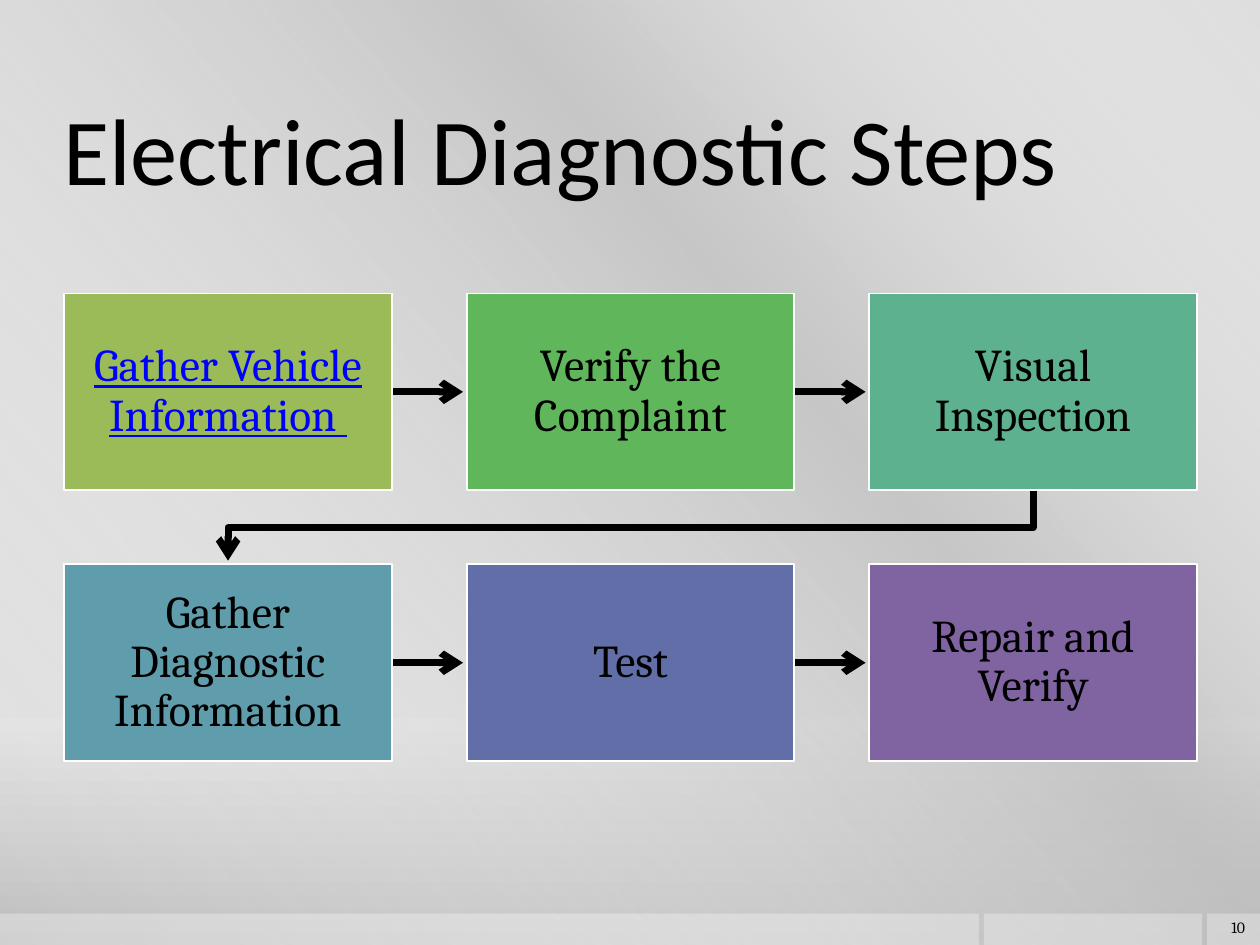
from lxml.etree import SubElement
from pptx import Presentation
from pptx.dml.color import RGBColor
from pptx.enum.shapes import MSO_CONNECTOR as Connector, MSO_SHAPE as Shape
from pptx.enum.text import MSO_ANCHOR as Anchor, PP_ALIGN as Align
from pptx.oxml.ns import qn
from pptx.util import Inches, Pt

TITLE = "Electrical Diagnostic Steps"
PAGE_NUMBER = "10"
COLORS = {"black": "000000", "white": "FFFFFF", "link": "0000FF"}
STEPS = [
    ("Gather Vehicle Information ", "9BBB59"),
    ("Verify the Complaint", "5FB65B"),
    ("Visual Inspection", "5DB18E"),
    ("Gather Diagnostic Information", "5F9DAC"),
    ("Test", "626EA7"),
    ("Repair and Verify", "8064A2"),
]
LINKED_STEP = 0
BACKDROP = [(0, "DEDEDE", 100), (76, "E1E1E1", 100), (100, "BDBDBD", 100)]
SHEEN = [(0, "FFFFFF", 0), (34, "BFBFBF", 61), (38, "BFBFBF", 76), (100, "FFFFFF", 0)]
FOOTER_STRIPS = [(0, 7.77), (7.81, 1.73), (9.58, 0.42)]

WIDTH, HEIGHT = 10, 7.5
FOOTER_HEIGHT = 0.25
COLUMNS = 3
LEFT, TOP = 0.51, 2.33
BOX_WIDTH, BOX_HEIGHT = 2.6, 1.56
COLUMN_STEP, ROW_STEP = 3.195, 2.15
ARROW_GAP = 0.03


def inches(*lengths):
    return [Inches(length) for length in lengths]


def rgb(name):
    return RGBColor.from_string(COLORS.get(name, name))


def write(shape, text, size, font="Cambria", color="black", align=Align.LEFT,
          underline=None, spacing=None, margins=(0.1, 0.05)):
    frame = shape.text_frame
    frame.word_wrap = True
    frame.vertical_anchor = Anchor.MIDDLE
    frame.margin_left = frame.margin_right = Inches(margins[0])
    frame.margin_top = frame.margin_bottom = Inches(margins[1])
    para = frame.paragraphs[0]
    para.alignment = align
    para.line_spacing = spacing
    span = para.add_run()
    span.text = text
    span.font.name = font
    span.font.size = Pt(size)
    span.font.underline = underline
    span.font.color.rgb = rgb(color)


def set_alpha(color_element, percent):
    SubElement(color_element, qn("a:alpha"), val=str(percent * 1000))


def paint_gradient(fill, holder, stops, angle):
    fill.gradient()
    fill.gradient_angle = 360 - angle
    stop_list = holder.find(qn("a:gradFill")).find(qn("a:gsLst"))
    for old in list(stop_list):
        stop_list.remove(old)
    for position, color, alpha in stops:
        stop = SubElement(stop_list, qn("a:gs"), pos=str(position * 1000))
        set_alpha(SubElement(stop, qn("a:srgbClr"), val=color), alpha)


def add_panel(slide, left, top, width, height):
    panel = slide.shapes.add_shape(Shape.RECTANGLE, *inches(left, top, width, height))
    panel.shadow.inherit = False
    panel.line.fill.background()
    return panel


def add_background(slide):
    fill = slide.background.fill
    fill.solid()
    paint_gradient(fill, slide.element.find(".//" + qn("p:bgPr")), BACKDROP, 90)
    sheen = add_panel(slide, 0, 0, WIDTH, HEIGHT)
    paint_gradient(sheen.fill, sheen.element.spPr, SHEEN, 140)
    for left, width in FOOTER_STRIPS:
        strip = add_panel(slide, left, HEIGHT - FOOTER_HEIGHT, width, FOOTER_HEIGHT)
        strip.fill.solid()
        strip.fill.fore_color.rgb = rgb("white")
        set_alpha(strip.element.spPr.find(".//" + qn("a:srgbClr")), 30)


def style_arrow(arrow):
    arrow.line.color.rgb = rgb("black")
    arrow.line.width = Pt(4)
    SubElement(arrow.line._get_or_add_ln(), qn("a:tailEnd"), type="arrow")


def add_arrow(slide, left, top):
    start = left + BOX_WIDTH
    end = left + COLUMN_STEP - ARROW_GAP
    middle = top + BOX_HEIGHT / 2
    arrow = slide.shapes.add_connector(Connector.STRAIGHT, *inches(start, middle, end, middle))
    style_arrow(arrow)
    SubElement(arrow.element.spPr, qn("a:effectLst"))


def add_return_arrow(slide, left, top):
    start_x = left + BOX_WIDTH / 2
    end_x = LEFT + BOX_WIDTH / 2
    start_y = top + BOX_HEIGHT
    end_y = top + ROW_STEP - ARROW_GAP
    bend_y = (start_y + top + ROW_STEP) / 2
    builder = slide.shapes.build_freeform(*inches(start_x, start_y), scale=1.0)
    corners = [(start_x, bend_y), (end_x, bend_y), (end_x, end_y)]
    builder.add_line_segments([inches(*corner) for corner in corners], close=False)
    arrow = builder.convert_to_shape()
    arrow.shadow.inherit = False
    arrow.fill.background()
    style_arrow(arrow)


def add_step(slide, index, text, color):
    row, column = divmod(index, COLUMNS)
    left = LEFT + column * COLUMN_STEP
    top = TOP + row * ROW_STEP
    if column < COLUMNS - 1:
        add_arrow(slide, left, top)
    elif index < len(STEPS) - 1:
        add_return_arrow(slide, left, top)
    box = add_panel(slide, left, top, BOX_WIDTH, BOX_HEIGHT)
    box.fill.solid()
    box.fill.fore_color.rgb = rgb(color)
    box.line.color.rgb = rgb("white")
    box.line.width = Pt(1.1)
    linked = index == LINKED_STEP
    write(box, text, 26, color="link" if linked else "black", underline=linked,
          align=Align.CENTER, spacing=0.9, margins=(0.2, 0.2))


def main():
    deck = Presentation()
    deck.slide_width, deck.slide_height = inches(WIDTH, HEIGHT)
    slide = deck.slides.add_slide(deck.slide_layouts[5])
    add_background(slide)
    title = slide.shapes.title
    title.left, title.top, title.width, title.height = inches(0.5, 0.67, 9, 1)
    write(title, TITLE, 54, font="Calibri", margins=(0, 0.05))
    slide.shapes._spTree.append(title.element)
    for index, (text, color) in enumerate(STEPS):
        add_step(slide, index, text, color)
    number = slide.shapes.add_textbox(*inches(9.56, 7.23, 0.42, FOOTER_HEIGHT))
    write(number, PAGE_NUMBER, 9, align=Align.RIGHT)
    deck.save("out.pptx")


if __name__ == "__main__":
    main()
